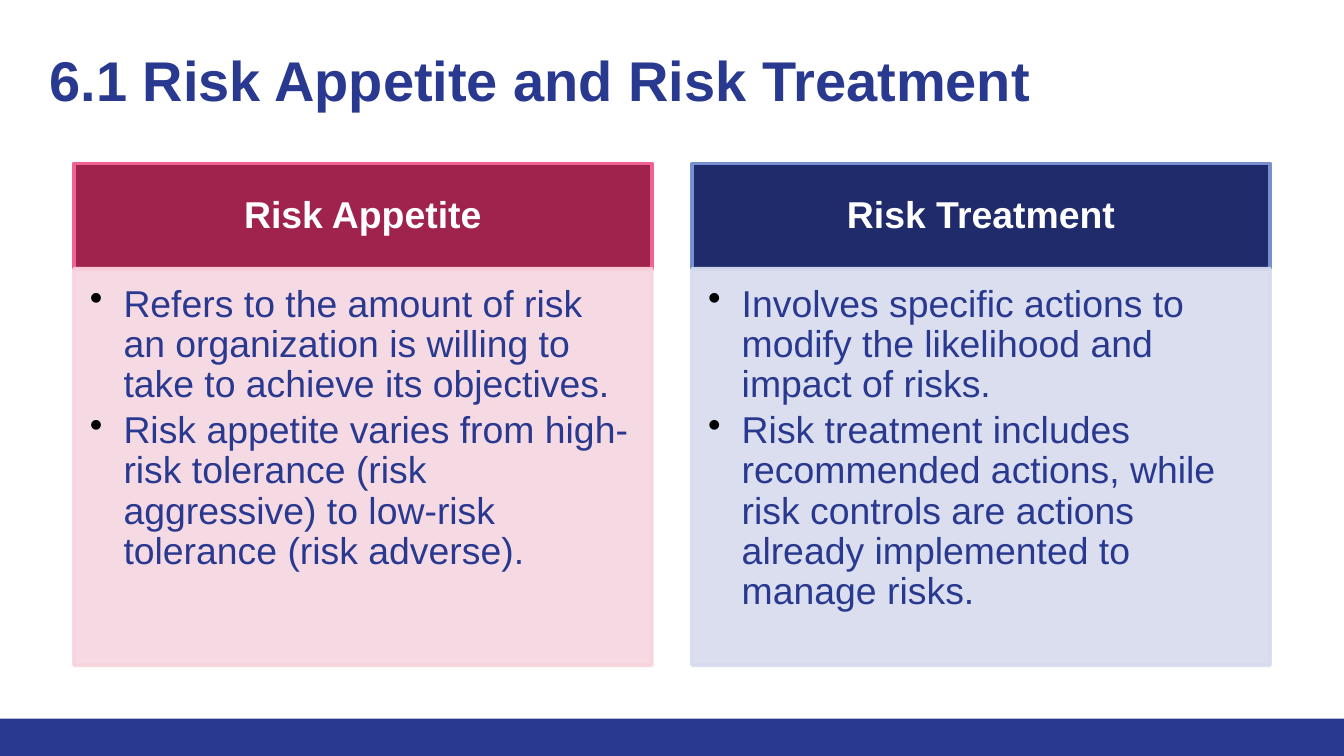
from lxml import etree
from pptx import Presentation
from pptx import util as u
from pptx.dml.color import RGBColor
from pptx.enum import shapes, text
from pptx.oxml import ns

NAVY = RGBColor(0x2A, 0x39, 0x90)
WHITE = RGBColor(0xFF, 0xFF, 0xFF)
CRIMSON = RGBColor(0xA0, 0x23, 0x4E)
PINK = RGBColor(0xF0, 0x62, 0x92)
ROSE = RGBColor(0xF6, 0xD6, 0xE1)
ROSE_EDGE = RGBColor(0xF9, 0xD3, 0xDC)
DARK_BLUE = RGBColor(0x20, 0x2B, 0x6C)
SKY = RGBColor(0x78, 0x90, 0xCD)
PALE_BLUE = RGBColor(0xD6, 0xDB, 0xED)

PANEL_LEFT, PANEL_PITCH, PANEL_WIDTH = 39.6, 331.2, 309.6
HEADER_TOP, BODY_TOP, BODY_BOTTOM = 87.6, 144, 356.4

PANELS = [
    ("Risk Appetite", CRIMSON, PINK, ROSE, ROSE_EDGE, [
        "Refers to the amount of risk an organization is willing to take to achieve its objectives.",
        "Risk appetite varies from high-risk tolerance (risk aggressive) to low-risk tolerance (risk adverse).",
    ]),
    ("Risk Treatment", DARK_BLUE, SKY, PALE_BLUE, PALE_BLUE, [
        "Involves specific actions to modify the likelihood and impact of risks.",
        "Risk treatment includes recommended actions, while risk controls are actions already implemented to manage risks.",
    ]),
]


def add_block(left, top, width, height, fill, edge=None):
    block = page.shapes.add_shape(shapes.MSO_SHAPE.RECTANGLE,
                                  u.Pt(left), u.Pt(top), u.Pt(width), u.Pt(height))
    block.shadow.inherit = False
    block.fill.solid()
    block.fill.fore_color.rgb = fill
    if edge is None:
        block.line.fill.background()
    else:
        block.line.color.rgb = edge
        block.line.width = u.Pt(2)
    return block


def set_text(box, lines, size, color, bold, insets):
    """Fill a shape with paragraphs; insets are left, top, right, bottom."""
    frame = box.text_frame
    frame.word_wrap = True
    frame.margin_left, frame.margin_top, frame.margin_right, frame.margin_bottom = map(u.Pt, insets)
    frame.vertical_anchor = text.MSO_ANCHOR.TOP
    frame.text = "\n".join(lines)
    for para in frame.paragraphs:
        para.alignment = text.PP_ALIGN.LEFT
        for span in para.runs:
            span.font.name = "Arial"
            span.font.size = u.Pt(size)
            span.font.bold = bold
            span.font.color.rgb = color
    return frame


deck = Presentation()
deck.slide_width, deck.slide_height = u.Pt(720), u.Pt(405)
page = deck.slides.add_slide(deck.slide_layouts[6])

add_block(0, 385, 720, 20, NAVY)

title = page.shapes.add_textbox(u.Pt(19.4), u.Pt(14.4), u.Pt(662.4), u.Pt(64))
set_text(title, ["6.1 Risk Appetite and Risk Treatment"], 30, NAVY, True, (7.2, 10, 7.2, 7.2))

for index, (heading, header_fill, header_edge, body_fill, body_edge, points) in enumerate(PANELS):
    left = PANEL_LEFT + index * PANEL_PITCH

    header = add_block(left, HEADER_TOP, PANEL_WIDTH, BODY_TOP - HEADER_TOP, header_fill, header_edge)
    frame = set_text(header, [heading], 20, WHITE, True, (11.5, 6.5, 11.5, 6.5))
    frame.vertical_anchor = text.MSO_ANCHOR.MIDDLE
    frame.paragraphs[0].alignment = text.PP_ALIGN.CENTER
    frame.paragraphs[0].line_spacing = 0.9

    body = add_block(left, BODY_TOP, PANEL_WIDTH, BODY_BOTTOM - BODY_TOP, body_fill, body_edge)
    for color in body.element.spPr.iter(ns.qn("a:srgbClr")):
        etree.SubElement(color, ns.qn("a:alpha"), val="90000")
    frame = set_text(body, points, 20, NAVY, False, (8.6, 8.6, 11.5, 12.2))
    for para in frame.paragraphs:
        para.line_spacing = 0.9
        para.space_after = u.Pt(3)
        properties = para._p.get_or_add_pPr()
        properties.set("marL", str(u.Pt(18)))
        properties.set("indent", str(u.Pt(-18)))
        bullet_color = etree.SubElement(properties, ns.qn("a:buClr"))
        etree.SubElement(bullet_color, ns.qn("a:srgbClr"), val="000000")
        etree.SubElement(properties, ns.qn("a:buChar"), char="•")

deck.save("out.pptx")
